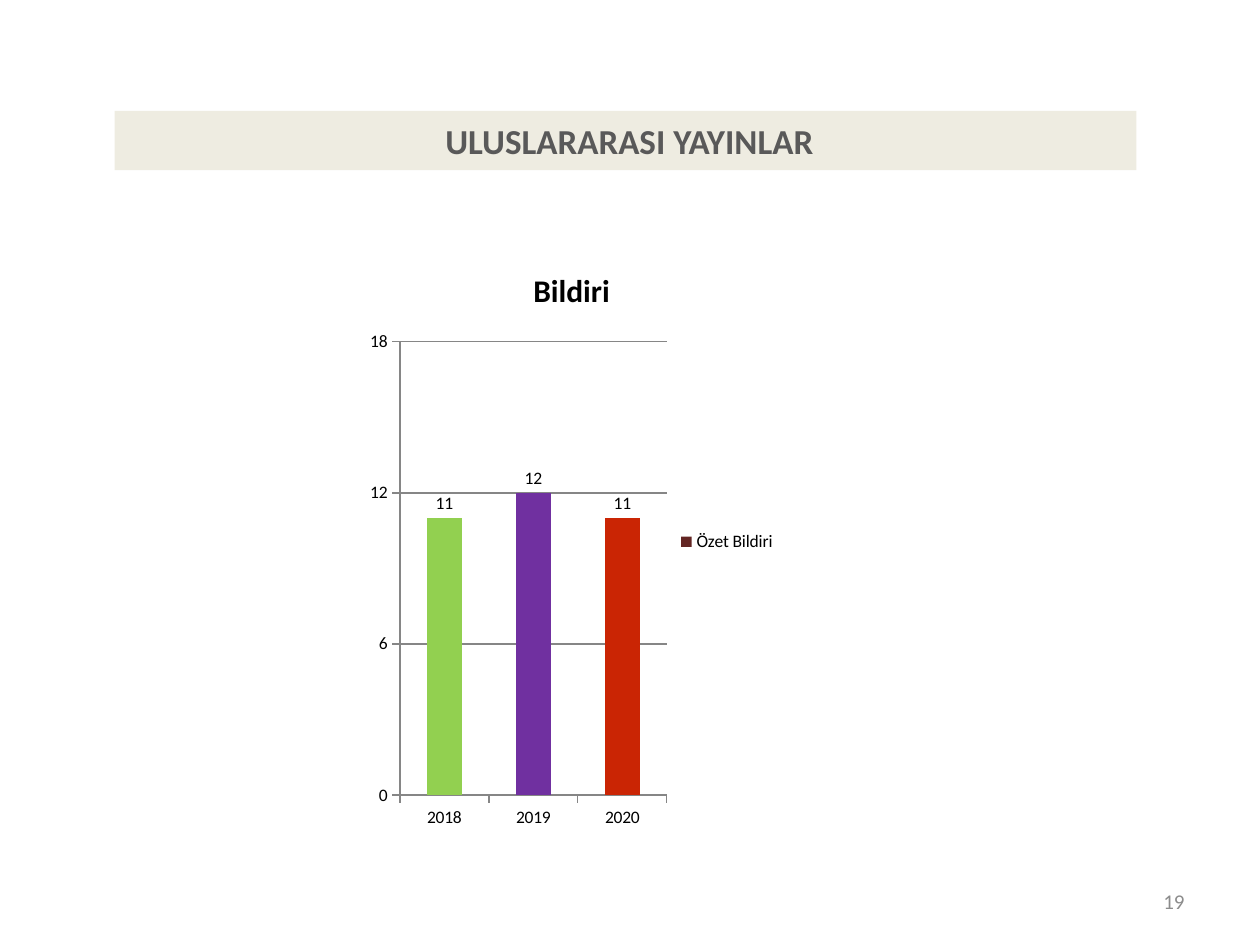
import pptx
import pptx.util
import pptx.chart.data
import pptx.dml.color
import pptx.enum.chart
import pptx.enum.text
from dataclasses import dataclass

Inches = pptx.util.Inches
Pt = pptx.util.Pt
Align = pptx.enum.text.PP_ALIGN

# Content
HEADING = " ULUSLARARASI YAYINLAR"
PAGE_NUMBER = "19"
CHART_TITLE = "Bildiri "
SERIES_NAME = "Özet Bildiri"
PAPERS = [("2018", 11, "92D050"), ("2019", 12, "7030A0"), ("2020", 11, "CA2504")]


@dataclass(frozen=True)
class Theme:
    font: str = "Calibri"
    banner: str = "EEECE1"
    heading: str = "595959"
    number: str = "8C8C8C"
    text: str = "000000"
    line: str = "868686"
    series: str = "632523"
    heading_size: int = 20
    chart_title_size: int = 18
    number_size: int = 12
    chart_size: int = 10


THEME = Theme()


def rgb(value):
    return pptx.dml.color.RGBColor.from_string(value)


def style_font(font, size, color, bold=False):
    font.name = THEME.font
    font.size = Pt(size)
    font.bold = bold
    font.color.rgb = rgb(color)


def write_text(frame, text, size, color, bold=False, align=Align.LEFT):
    frame.word_wrap = True
    frame.vertical_anchor = pptx.enum.text.MSO_ANCHOR.MIDDLE
    para = frame.paragraphs[0]
    para.alignment = align
    span = para.add_run()
    span.text = text
    style_font(span.font, size, color, bold)


def paint(part, color):
    part.format.fill.solid()
    part.format.fill.fore_color.rgb = rgb(color)


def add_paper_chart(page):
    years, counts, colors = zip(*PAPERS)
    data = pptx.chart.data.CategoryChartData()
    data.categories = years
    data.add_series(SERIES_NAME, counts)
    chart = page.shapes.add_chart(
        pptx.enum.chart.XL_CHART_TYPE.COLUMN_CLUSTERED,
        Inches(2.87), Inches(1.94), Inches(3.39), Inches(4.72), data).chart
    style_font(chart.font, THEME.chart_size, THEME.text)

    # Title and legend
    chart.has_title = True
    write_text(chart.chart_title.text_frame, CHART_TITLE, THEME.chart_title_size,
               THEME.text, bold=True, align=Align.CENTER)
    chart.chart_title.include_in_layout = False
    chart.has_legend = True
    chart.legend.position = pptx.enum.chart.XL_LEGEND_POSITION.RIGHT
    chart.legend.include_in_layout = False

    # Columns and value labels
    plot = chart.plots[0]
    plot.gap_width = 150
    plot.vary_by_categories = False
    series = plot.series[0]
    paint(series, THEME.series)
    for index, color in enumerate(colors):
        paint(series.points[index], color)
    series.data_labels.show_value = True
    series.data_labels.position = pptx.enum.chart.XL_LABEL_POSITION.OUTSIDE_END

    # Axes
    values = chart.value_axis
    values.minimum_scale, values.maximum_scale, values.major_unit = 0, 18, 6
    values.has_major_gridlines = True
    for part in (values, chart.category_axis, values.major_gridlines):
        part.format.line.color.rgb = rgb(THEME.line)
        part.format.line.width = Pt(0.75)
    for axis in (values, chart.category_axis):
        axis.major_tick_mark = pptx.enum.chart.XL_TICK_MARK.OUTSIDE


def main():
    deck = pptx.Presentation()
    deck.slide_width, deck.slide_height = Inches(10), Inches(7.5)
    page = deck.slides.add_slide(deck.slide_layouts[5])

    # Heading banner
    banner = page.shapes.title
    banner.left, banner.top = Inches(0.91), Inches(0.88)
    banner.width, banner.height = Inches(8.11), Inches(0.47)
    banner.fill.solid()
    banner.fill.fore_color.rgb = rgb(THEME.banner)
    write_text(banner.text_frame, HEADING, THEME.heading_size, THEME.heading,
               bold=True, align=Align.CENTER)

    add_paper_chart(page)

    # Page number
    box = page.shapes.add_textbox(Inches(7.17), Inches(6.95), Inches(2.33), Inches(0.4))
    write_text(box.text_frame, PAGE_NUMBER, THEME.number_size, THEME.number,
               align=Align.RIGHT)

    deck.save("out.pptx")


if __name__ == "__main__":
    main()
